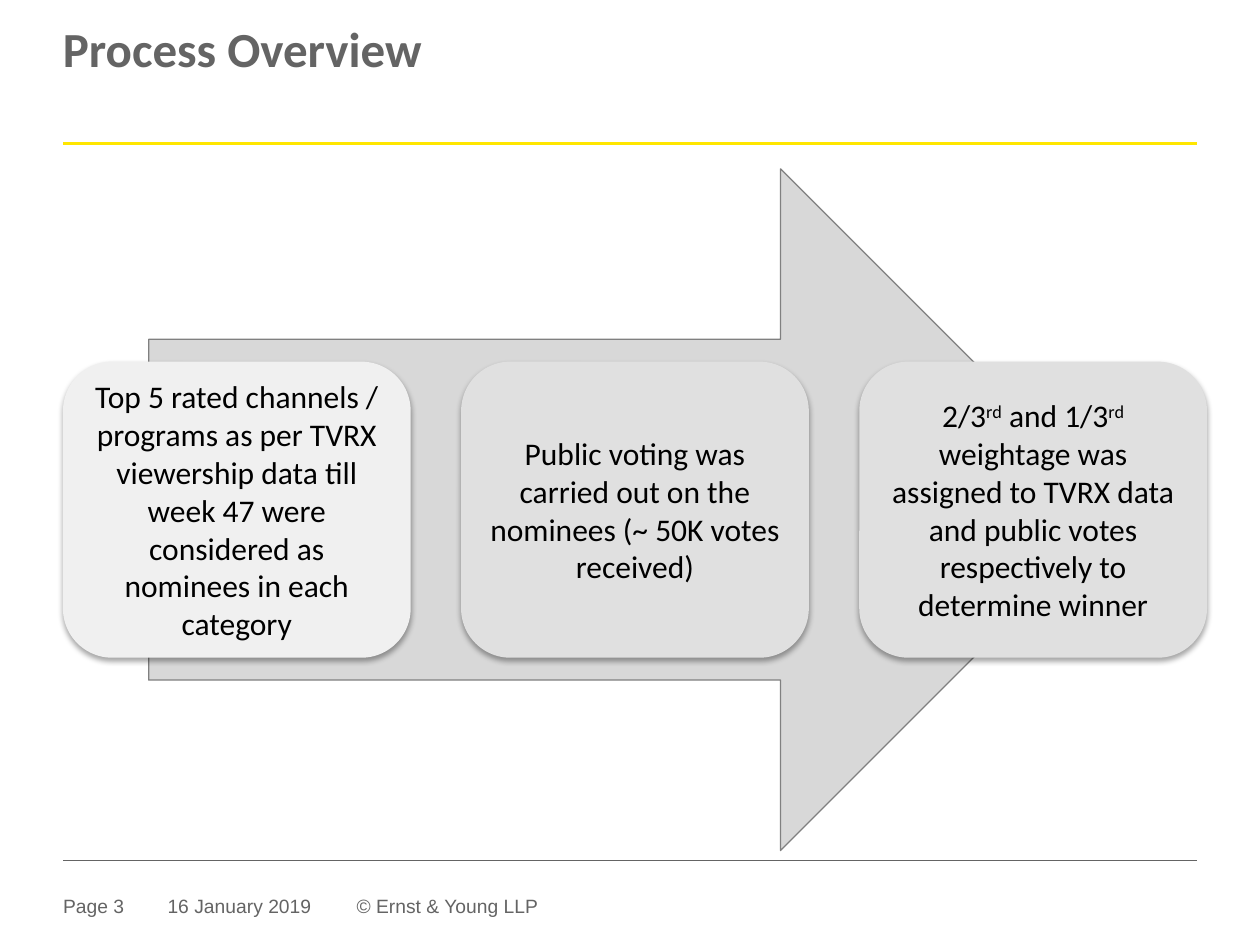
import pptx
import pptx.dml.color
import pptx.enum.shapes
import pptx.enum.text
import pptx.oxml
import pptx.oxml.ns
import pptx.util

Inches, Pt = pptx.util.Inches, pptx.util.Pt
RGBColor = pptx.dml.color.RGBColor
Shapes = pptx.enum.shapes.MSO_SHAPE
Align, Anchor = pptx.enum.text.PP_ALIGN, pptx.enum.text.MSO_ANCHOR

COLORS = {
    "grey": "646464", "yellow": "FFE600", "arrow": "D8D8D8", "outline": "808080",
    "light step": "F0F0F0", "step": "E0E0E0", "black": "000000",
}
COLORS = {name: RGBColor.from_string(value) for name, value in COLORS.items()}
FOOTER_FONT = {"name": "Arial", "size": Pt(11)}
TITLE_FONT = {"name": "Calibri", "size": Pt(28), "bold": True}
STEP_FONT = {"name": "Calibri", "size": Pt(18)}
NAMESPACE = pptx.oxml.ns.nsdecls("a")
NO_EFFECTS = f"<a:effectLst {NAMESPACE}/>"
SHADOW = (
    f'<a:outerShdw {NAMESPACE} blurRad="{Pt(3.1)}" dist="{Pt(1.8)}" '
    'dir="5400000" rotWithShape="0"><a:srgbClr val="000000"><a:alpha val="35000"/>'
    "</a:srgbClr></a:outerShdw>"
)


def set_frame(shape, margin, wrap=True):
    """Set equal margins and wrapping, and return the first paragraph."""
    frame = shape.text_frame
    for side in ("left", "top", "right", "bottom"):
        setattr(frame, f"margin_{side}", Inches(margin))
    frame.word_wrap = wrap
    return frame.paragraphs[0]


def add_run(paragraph, text, font, color):
    run = paragraph.add_run()
    run.text = text
    for name, value in font.items():
        setattr(run.font, name, value)
    run.font.color.rgb = COLORS[color]
    return run


presentation = pptx.Presentation()
presentation.slide_width, presentation.slide_height = Inches(10), Inches(7.5)
slide = presentation.slides.add_slide(presentation.slide_layouts[6])

# Title and footer
texts = [
    ("Page 3", 0.5, 7.1, 0.79, 0.22, FOOTER_FONT, True),
    ("16 January 2019", 1.33, 7.1, 1.3, 0.22, FOOTER_FONT, False),
    ("© Ernst & Young LLP", 2.83, 7.1, 3.76, 0.22, FOOTER_FONT, True),
    ("Process Overview", 0.5, 0.22, 9, 0.94, TITLE_FONT, True),
]
for text, left, top, width, height, font, wrap in texts:
    box = slide.shapes.add_textbox(*map(Inches, (left, top, width, height)))
    paragraph = set_frame(box, 0, wrap)
    add_run(paragraph, text, font, "grey")
paragraph.line_spacing = 0.85  # the title comes last

# Rules below the title and above the footer
for top, color, weight in [(1.14, "yellow", 1.5), (6.83, "grey", 0.25)]:
    rule = slide.shapes.add_connector(
        pptx.enum.shapes.MSO_CONNECTOR.STRAIGHT,
        Inches(0.5), Inches(top), Inches(9.5), Inches(top))
    rule.line.color.rgb = COLORS[color]
    rule.line.width = Pt(weight)
    rule._element.spPr.append(pptx.oxml.parse_xml(NO_EFFECTS))

# Arrow behind the steps
arrow = slide.shapes.add_shape(
    Shapes.RIGHT_ARROW, Inches(1.18), Inches(1.34), Inches(7.72), Inches(5.41))
arrow.shadow.inherit = False
arrow.fill.solid()
arrow.fill.fore_color.rgb = COLORS["arrow"]
arrow.line.color.rgb = COLORS["outline"]
arrow.line.width = Pt(0.75)

# Steps: each run is a text and whether it is superscript
steps = [
    ("light step", [("Top 5 rated channels / programs as per TVRX viewership data till "
                     "week 47 were considered as nominees in each category", False)]),
    ("step", [("Public voting was carried out on the nominees (~ 50K votes received)",
               False)]),
    ("step", [("2/3", False), ("rd", True), (" and 1/3", False), ("rd ", True),
              ("weightage was assigned to TVRX data and public votes respectively "
               "to determine winner", False)]),
]
for index, (fill, runs) in enumerate(steps):
    step = slide.shapes.add_shape(
        Shapes.ROUNDED_RECTANGLE, Inches(0.5 + 3.16 * index), Inches(2.87),
        Inches(2.76), Inches(2.35))
    step.shadow.inherit = False
    effects = step._element.spPr.find(pptx.oxml.ns.qn("a:effectLst"))
    effects.append(pptx.oxml.parse_xml(SHADOW))
    step.fill.solid()
    step.fill.fore_color.rgb = COLORS[fill]
    step.line.fill.background()
    step.text_frame.vertical_anchor = Anchor.MIDDLE
    paragraph = set_frame(step, 0.07)
    paragraph.alignment = Align.CENTER
    for text, superscript in runs:
        run = add_run(paragraph, text, STEP_FONT, "black")
        if superscript:
            run.font._element.set("baseline", "30000")

presentation.save("out.pptx")
